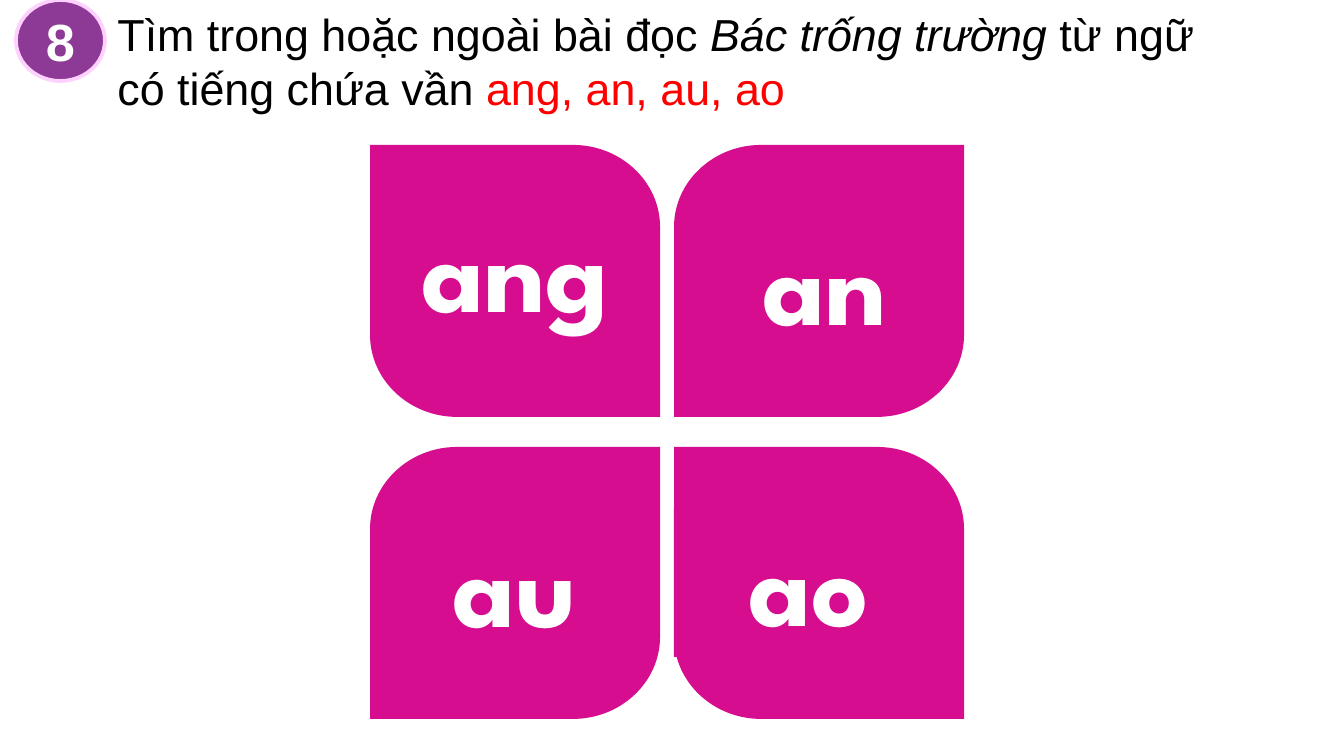
from lxml.etree import SubElement
from pptx import Presentation
from pptx.dml.color import RGBColor
from pptx.enum.shapes import MSO_SHAPE as Shape
from pptx.enum.text import MSO_ANCHOR as Anchor, MSO_AUTO_SIZE as AutoSize, PP_ALIGN as Align
from pptx.oxml.ns import qn
from pptx.util import Pt

SCALE = 914400 / 134.4
BLACK, WHITE, RED = "000000", "FFFFFF", "FF0000"
PINK, PURPLE, LILAC = "D50D8E", "8D3A96", "FFD1FF"

NUMBER = "8"
TASK = [
    ("Tìm trong hoặc ngoài bài đọc ", BLACK, False),
    ("Bác trống trường ", BLACK, True),
    ("từ ngữ có tiếng chứa vần ", BLACK, False),
    ("ang, an, au, ao", RED, False),
]
RHYMES = [
    ("ang", 0, 0, (381, 194)),
    ("an", 1, 0, (690, 207)),
    ("au", 0, 1, (380, 509)),
    ("ao", 1, 1, (674, 508)),
]
PETAL_LEFT, PETAL_TOP, PETAL_W, PETAL_H = 370, 145, 290, 272
COLUMN_STEP, ROW_STEP = 304, 302
RADIUS_X, RADIUS_Y, CURVE = 87, 82, 0.55
LABEL_W, LABEL_H = 269, 149


def px(*lengths):
    return [round(length * SCALE) for length in lengths]


def color(hex_code):
    return RGBColor.from_string(hex_code)


def paint(shape, hex_code):
    shape.fill.solid()
    shape.fill.fore_color.rgb = color(hex_code)


def add_run(paragraph, text, font_name, size, hex_code, bold=False, italic=False):
    run = paragraph.add_run()
    run.text = text
    font = run.font
    font.name, font.size, font.bold, font.italic = font_name, Pt(size), bold, italic
    font.color.rgb = color(hex_code)


def petal_outline(left, top, falling):
    right, bottom = left + PETAL_W, top + PETAL_H
    corners = [(left, top, 1, 1), (right, top, -1, 1), (right, bottom, -1, -1), (left, bottom, 1, -1)]
    points = []
    for index, (x, y, inward_x, inward_y) in enumerate(corners):
        ends = [(x, y + inward_y * RADIUS_Y), (x + inward_x * RADIUS_X, y)]
        if falling and index % 2 == 0:
            points += ends
        elif not falling and index % 2 == 1:
            points += ends[::-1]
        else:
            points.append((x, y))
    return [tuple(px(*point)) for point in points]


def round_corners(petal, falling):
    outline = next(petal._element.iter(qn("a:path")))
    steps = list(outline)
    for index in (1, 4) if falling else (2, 5):
        start, end = [
            (int(step[0].get("x")), int(step[0].get("y"))) for step in steps[index - 1:index + 1]
        ]
        corner = (start[0], end[1]) if falling else (end[0], start[1])
        controls = [
            [round(a + (c - a) * CURVE) for a, c in zip(point, corner)] for point in (start, end)
        ]
        curve = SubElement(outline, qn("a:cubicBezTo"))
        for x, y in controls + [end]:
            SubElement(curve, qn("a:pt"), x=str(x), y=str(y))
        outline.replace(steps[index], curve)


def add_petal(slide, rhyme, column, row, label_at):
    group = slide.shapes.add_group_shape()
    falling = column != row
    outline = petal_outline(
        PETAL_LEFT + column * COLUMN_STEP, PETAL_TOP + row * ROW_STEP, falling
    )
    builder = group.shapes.build_freeform(*outline[0])
    builder.add_line_segments(outline[1:], close=True)
    petal = builder.convert_to_shape()
    round_corners(petal, falling)
    petal.shadow.inherit = False
    petal.line.fill.background()
    paint(petal, PINK)

    label = group.shapes.add_textbox(*px(*label_at, LABEL_W, LABEL_H))
    paint(label, PINK)
    frame = label.text_frame
    frame.word_wrap, frame.auto_size = True, AutoSize.SHAPE_TO_FIT_TEXT
    paragraph = frame.paragraphs[0]
    paragraph.alignment = Align.CENTER
    add_run(paragraph, rhyme, "League Spartan", 60, WHITE, bold=True)


def add_task(slide):
    title = slide.shapes.title
    title.left, title.top, title.width, title.height = px(104, 0, 1126, 122)
    paint(title, WHITE)
    frame = title.text_frame
    frame.word_wrap, frame.auto_size = True, AutoSize.SHAPE_TO_FIT_TEXT
    frame.vertical_anchor = Anchor.TOP
    paragraph = frame.paragraphs[0]
    paragraph.alignment = Align.LEFT
    for text, hex_code, italic in TASK:
        add_run(paragraph, text, "Arial", 24, hex_code, italic=italic)


def add_badge(slide):
    badge = slide.shapes.add_shape(Shape.OVAL, *px(16, 0, 89, 81))
    badge.shadow.inherit = False
    paint(badge, PURPLE)
    badge.line.color.rgb = color(LILAC)
    badge.line.width = Pt(2)
    frame = badge.text_frame
    frame.vertical_anchor = Anchor.MIDDLE
    paragraph = frame.paragraphs[0]
    paragraph.alignment = Align.CENTER
    add_run(paragraph, NUMBER, "Arial", 28, WHITE, bold=True)


def main():
    deck = Presentation()
    deck.slide_width, deck.slide_height = px(1344, 756)
    slide = deck.slides.add_slide(deck.slide_layouts[5])
    add_task(slide)
    add_badge(slide)
    for rhyme in RHYMES:
        add_petal(slide, *rhyme)
    deck.save("out.pptx")


if __name__ == "__main__":
    main()
